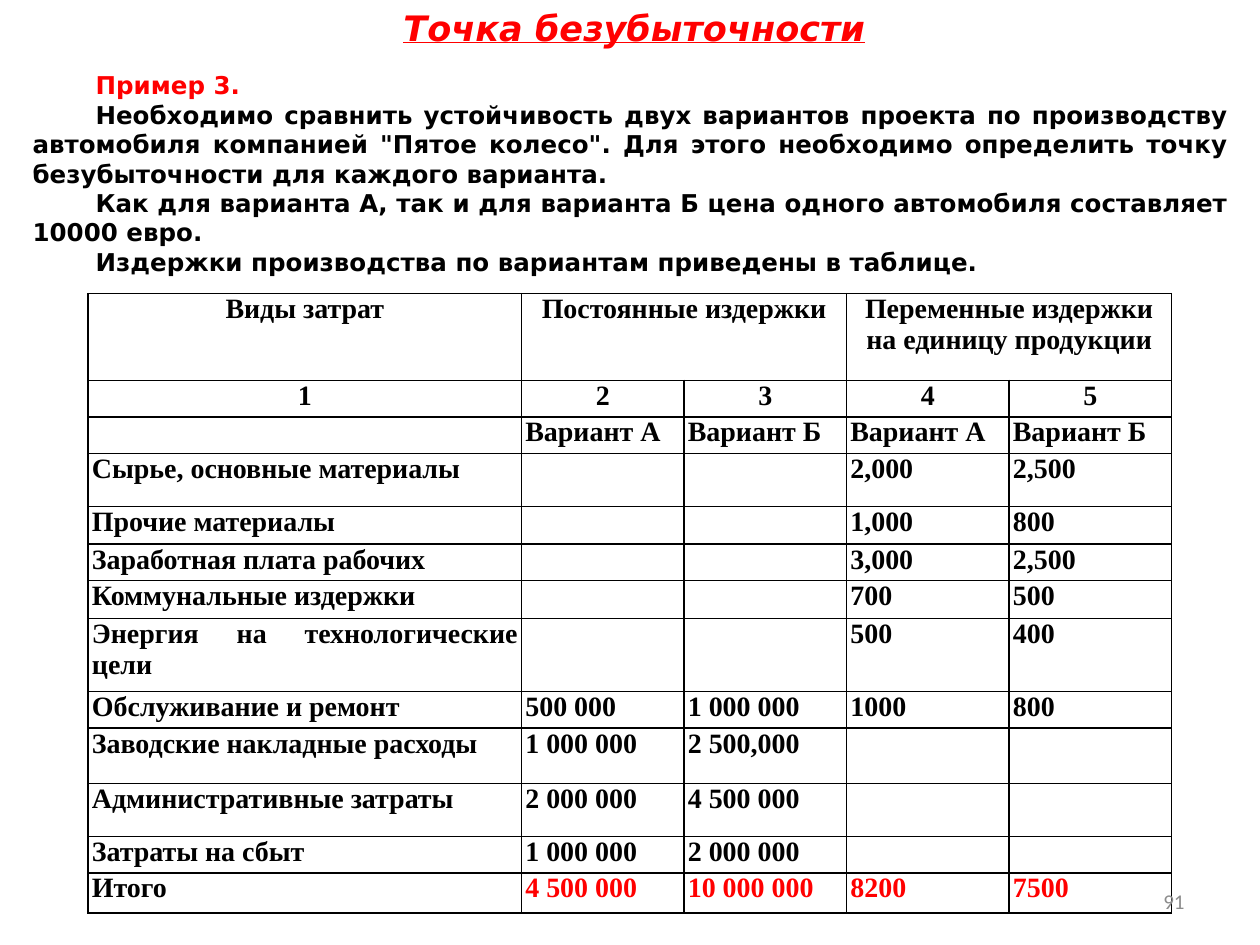
from lxml import etree
from pptx import Presentation
from pptx import util as u
from pptx.dml.color import RGBColor
from pptx.enum import text as t
from pptx.oxml import ns

WIDTH, HEIGHT = 10, 7.5
BLACK, RED, GREY = "000000", "FF0000", "8C8C8C"
SANS, SERIF = "DejaVu Sans", "Times New Roman"
CENTER, JUSTIFY, RIGHT = t.PP_ALIGN.CENTER, t.PP_ALIGN.JUSTIFY, t.PP_ALIGN.RIGHT
CELL_SIZE = 16
LOW_ROW = 0.29
COLUMN_WIDTHS = [3.44] + [1.29] * 4
COST_ROWS = [
    (0.69, ["Виды затрат", "Постоянные издержки", "",
            "Переменные издержки на единицу продукции", ""]),
    (LOW_ROW, ["1", "2", "3", "4", "5"]),
    (LOW_ROW, [""] + ["Вариант А", "Вариант Б"] * 2),
    (0.42, ["Сырье, основные материалы", "", "", "2,000", "2,500"]),
    (0.3, ["Прочие материалы", "", "", "1,000", "800"]),
    (LOW_ROW, ["Заработная плата рабочих", "", "", "3,000", "2,500"]),
    (0.3, ["Коммунальные издержки", "", "", "700", "500"]),
    (0.58, ["Энергия на технологические цели", "", "", "500", "400"]),
    (LOW_ROW, ["Обслуживание и ремонт", "500 000", "1 000 000", "1000", "800"]),
    (0.44, ["Заводские накладные расходы", "1 000 000", "2 500,000", "", ""]),
    (0.42, ["Административные затраты", "2 000 000", "4 500 000", "", ""]),
    (LOW_ROW, ["Затраты на сбыт", "1 000 000", "2 000 000", "", ""]),
    (0.32, ["Итого", "4 500 000", "10 000 000", "8200", "7500"]),
]
TASK = [
    ("Пример 3.", RED),
    ("Необходимо сравнить устойчивость двух вариантов проекта по производству "
     "автомобиля компанией \"Пятое колесо\". Для этого необходимо определить "
     "точку безубыточности для каждого варианта.", BLACK),
    ("Как для варианта А, так и для варианта Б цена одного автомобиля "
     "составляет 10000 евро.", BLACK),
    ("Издержки производства по вариантам приведены в таблице.", BLACK),
]


def paint(target, color):
    target.rgb = RGBColor.from_string(color)


def add_run(paragraph, words, font, size, color, bold=True):
    run = paragraph.add_run()
    run.text = words
    run.font.name = font
    run.font.size = u.Pt(size)
    run.font.bold = bold
    paint(run.font.color, color)
    return run


def add_text_box(slide, left, top, width, height, lines, font, size, align,
                 anchor=t.MSO_ANCHOR.TOP, bold=True, indent=0):
    shape = slide.shapes.add_textbox(*map(u.Inches, (left, top, width, height)))
    frame = shape.text_frame
    frame.word_wrap = True
    frame.vertical_anchor = anchor
    for index, (words, color) in enumerate(lines):
        paragraph = frame.add_paragraph() if index else frame.paragraphs[0]
        paragraph.alignment = align
        if indent:
            properties = paragraph._p.get_or_add_pPr()
            properties.set("marL", "0")
            properties.set("indent", str(u.Inches(indent)))
        add_run(paragraph, words, font, size, color, bold)
    return shape


def add_borders(cell):
    properties = cell._tc.get_or_add_tcPr()
    for side in ("lnL", "lnR", "lnT", "lnB"):
        line = etree.SubElement(properties, ns.qn(f"a:{side}"), w=str(u.Pt(1)))
        fill = etree.SubElement(line, ns.qn("a:solidFill"))
        etree.SubElement(fill, ns.qn("a:srgbClr"), val=BLACK)


def fill_cell(cell, words, align, space, color):
    cell.margin_left = cell.margin_right = u.Inches(0.03)
    cell.margin_top = cell.margin_bottom = 0
    add_borders(cell)
    cell.fill.background()
    paragraph = cell.text_frame.paragraphs[0]
    paragraph.alignment = align
    if words:
        paragraph.space_before = u.Pt(space)
        add_run(paragraph, words, SERIF, CELL_SIZE, color)
    else:
        etree.SubElement(paragraph._p, ns.qn("a:endParaRPr"), sz=str(CELL_SIZE * 50))


def add_cost_table(slide, left, top):
    heights = [height for height, _ in COST_ROWS]
    frame = slide.shapes.add_table(
        len(heights), len(COLUMN_WIDTHS), u.Inches(left), u.Inches(top),
        u.Inches(sum(COLUMN_WIDTHS)), u.Inches(sum(heights)))
    table = frame.table
    table.first_row = table.horz_banding = False
    for column, width in zip(table.columns, COLUMN_WIDTHS):
        column.width = u.Inches(width)
    for row, (height, words) in enumerate(COST_ROWS):
        table.rows[row].height = u.Inches(height)
        align = CENTER if row < 2 else JUSTIFY
        space = 1 if height == LOW_ROW else 2
        for column, value in enumerate(words):
            is_total = row == len(COST_ROWS) - 1 and column > 0
            fill_cell(table.cell(row, column), value, align, space,
                      RED if is_total else BLACK)
    for column in (1, 3):
        table.cell(0, column).merge(table.cell(0, column + 1))


def main():
    presentation = Presentation()
    presentation.slide_width = u.Inches(WIDTH)
    presentation.slide_height = u.Inches(HEIGHT)
    slide = presentation.slides.add_slide(presentation.slide_layouts[6])
    middle = t.MSO_ANCHOR.MIDDLE
    title = add_text_box(slide, 0.31, 0, 9.45, 0.44,
                         [("Точка безубыточности", RED)], SANS, 20, CENTER)
    title_font = title.text_frame.paragraphs[0].runs[0].font
    title_font.italic = title_font.underline = True
    add_cost_table(slide, 0.7, 2.33)
    add_text_box(slide, 0.16, 0.5, 9.69, 1.75, TASK, SANS, 14, JUSTIFY,
                 middle, indent=0.5)
    add_text_box(slide, 7.17, 6.95, 2.33, 0.4, [("91", GREY)], "Calibri", 12,
                 RIGHT, middle, bold=False)
    presentation.save("out.pptx")


if __name__ == "__main__":
    main()
